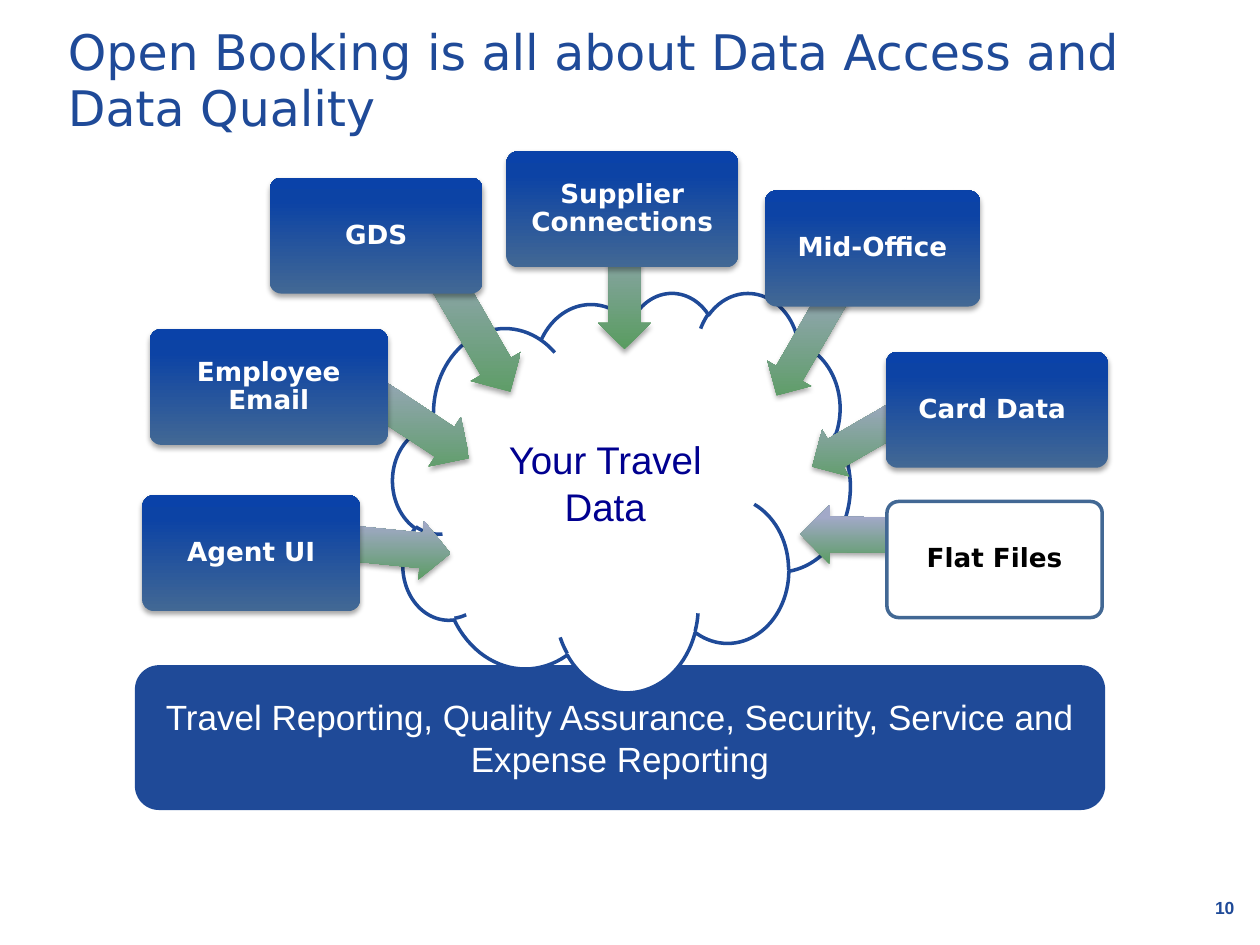
import copy

import pptx
import pptx.dml.color
import pptx.enum.shapes
import pptx.enum.text
import pptx.oxml.ns
import pptx.util
from lxml import etree

Cm = pptx.util.Cm
Pt = pptx.util.Pt
qn = pptx.oxml.ns.qn
SHAPES = pptx.enum.shapes.MSO_SHAPE
ANCHOR = pptx.enum.text.MSO_ANCHOR
ALIGN = pptx.enum.text.PP_ALIGN

COLORS = {
    "blue": "1F4A98", "navy": "000090", "steel": "426894",
    "royal": "0C43A5", "cobalt": "0A42A9", "green": "599C60",
    "lavender": "A2A9C8", "mist": "A2AAC9", "white": "FFFFFF", "black": "000000",
}
BOX_GRADIENT = ["steel", "royal", "cobalt"]
ARROW_GRADIENT = ["green", "lavender", "mist"]
GRADIENT_POSITIONS = [0, 0.8, 1]
BOX_HEIGHT = 2.34

# label, box (left, top, width), arrow (left, top, width, height), arrow rotation
SOURCES = [
    ("Employee Email", (3.02, 6.63, 4.8), (5.89, 7.57, 3.89, 1.19), 213.3),
    ("Card Data ", (17.86, 7.09, 4.47), (16.18, 8.13, 2.92, 1.09), 330),
    ("Mid-Office", (15.42, 3.84, 4.34), (14.78, 5.94, 3.51, 1.02), 300),
    ("Supplier Connections", (10.21, 3.05, 4.67), (10.8, 4.72, 3.58, 1.07), 270),
    ("GDS", (5.44, 3.58, 4.29), (6.86, 5.33, 4.57, 1.17), 240),
    ("Agent UI", (2.87, 9.98, 4.39), (5.69, 10.39, 3.4, 1.19), 185.7),
    ("Flat Files", (17.88, 10.11, 4.34), (16.13, 10.19, 3.71, 1.19), 0.6),
]
OUTLINED = "Flat Files"


def color(name):
    return pptx.dml.color.RGBColor.from_string(COLORS[name])


def set_values(target, values):
    for name, value in values.items():
        setattr(target, name, value)


class SlideBuilder:
    box_font = {"size": Pt(15), "name": "DejaVu Sans", "bold": True}

    def __init__(self, slide):
        self.slide = slide

    def label(self, shape, text, font, font_color, inset=0.25, anchor=ANCHOR.MIDDLE,
              align=ALIGN.CENTER, spacing=1.0):
        frame = shape.text_frame
        sides = ("left", "top", "right", "bottom")
        set_values(frame, {f"margin_{side}": Cm(inset) for side in sides})
        set_values(frame, {"word_wrap": True, "vertical_anchor": anchor})
        paragraph = frame.paragraphs[0]
        set_values(paragraph, {"text": text, "alignment": align, "line_spacing": spacing})
        set_values(paragraph.font, font)
        paragraph.font.color.rgb = color(font_color)

    def text(self, bounds, text, font, **layout):
        shape = self.slide.shapes.add_textbox(*map(Cm, bounds))
        self.label(shape, text, font, "blue", **layout)

    def shape(self, kind, bounds, fill=None, line=None, adjustments=()):
        shape = self.slide.shapes.add_shape(kind, *map(Cm, bounds))
        shape.shadow.inherit = False
        for index, value in enumerate(adjustments):
            shape.adjustments[index] = value
        if fill:
            shape.fill.solid()
            shape.fill.fore_color.rgb = color(fill)
        if line:
            shape.line.color.rgb = color(line)
            shape.line.width = Pt(2)
        else:
            shape.line.fill.background()
        return shape

    def shade(self, shape, names):
        """Upright three-stop gradient with a soft shadow below."""
        shape.fill.gradient()
        shape.fill.gradient_angle = 90
        properties = shape._element.spPr
        gradient = properties.find(qn("a:gradFill"))
        gradient.set("rotWithShape", "0")
        stop_list = gradient.find(qn("a:gsLst"))
        stop_list.append(copy.deepcopy(stop_list[-1]))
        for stop, name, position in zip(shape.fill.gradient_stops, names, GRADIENT_POSITIONS):
            stop.color.rgb = color(name)
            stop.position = position
        shadow = etree.SubElement(
            properties.find(qn("a:effectLst")), qn("a:outerShdw"),
            blurRad=str(Pt(3.1)), dist=str(Pt(1.8)), dir="5400000", rotWithShape="0")
        shadow_color = etree.SubElement(shadow, qn("a:srgbClr"), val=COLORS["black"])
        etree.SubElement(shadow_color, qn("a:alpha"), val="35000")

    def arrow(self, bounds, rotation):
        shape = self.shape(SHAPES.LEFT_ARROW, bounds, adjustments=(0.6, 0.5))
        shape.rotation = rotation
        self.shade(shape, ARROW_GRADIENT)

    def box(self, position, label, outlined):
        style = {"fill": "white", "line": "steel"} if outlined else {}
        shape = self.shape(SHAPES.ROUNDED_RECTANGLE, (*position, BOX_HEIGHT),
                           adjustments=(0.1,), **style)
        if not outlined:
            self.shade(shape, BOX_GRADIENT)
        self.label(shape, label, self.box_font, "black" if outlined else "white",
                   inset=0.15, spacing=0.9)


def main():
    presentation = pptx.Presentation()
    set_values(presentation, {"slide_width": Cm(25.4), "slide_height": Cm(19.05)})
    builder = SlideBuilder(presentation.slides.add_slide(presentation.slide_layouts[6]))

    # Slide number
    builder.text((24.03, 18.08, 1.32, 0.48), "10",
                 {"size": Pt(10), "name": "Arial", "bold": True},
                 inset=0.05, anchor=ANCHOR.BOTTOM, spacing=0.9)

    # Reporting bar and data cloud
    bar = builder.shape(SHAPES.ROUNDED_RECTANGLE, (2.72, 13.41, 19.56, 2.92), "blue")
    builder.label(bar, "Travel Reporting, Quality Assurance, Security, Service and "
                  "Expense Reporting", {"size": Pt(20), "name": "Arial"}, "white")
    cloud = builder.shape(SHAPES.CLOUD, (7.92, 5.89, 9.22, 8.05), "white", "blue")
    builder.label(cloud, "Your Travel Data", {"size": Pt(22), "name": "Arial"}, "navy")

    # Title
    builder.text((1.37, 0.71, 22.86, 2.06),
                 "Open Booking is all about Data Access and Data Quality",
                 {"size": Pt(28), "name": "DejaVu Sans"},
                 inset=0, anchor=ANCHOR.BOTTOM, align=ALIGN.LEFT, spacing=0.95)

    # Data sources, each box over its arrow
    for label, box, arrow, rotation in SOURCES:
        builder.arrow(arrow, rotation)
        builder.box(box, label, label == OUTLINED)

    presentation.save("out.pptx")


if __name__ == "__main__":
    main()
